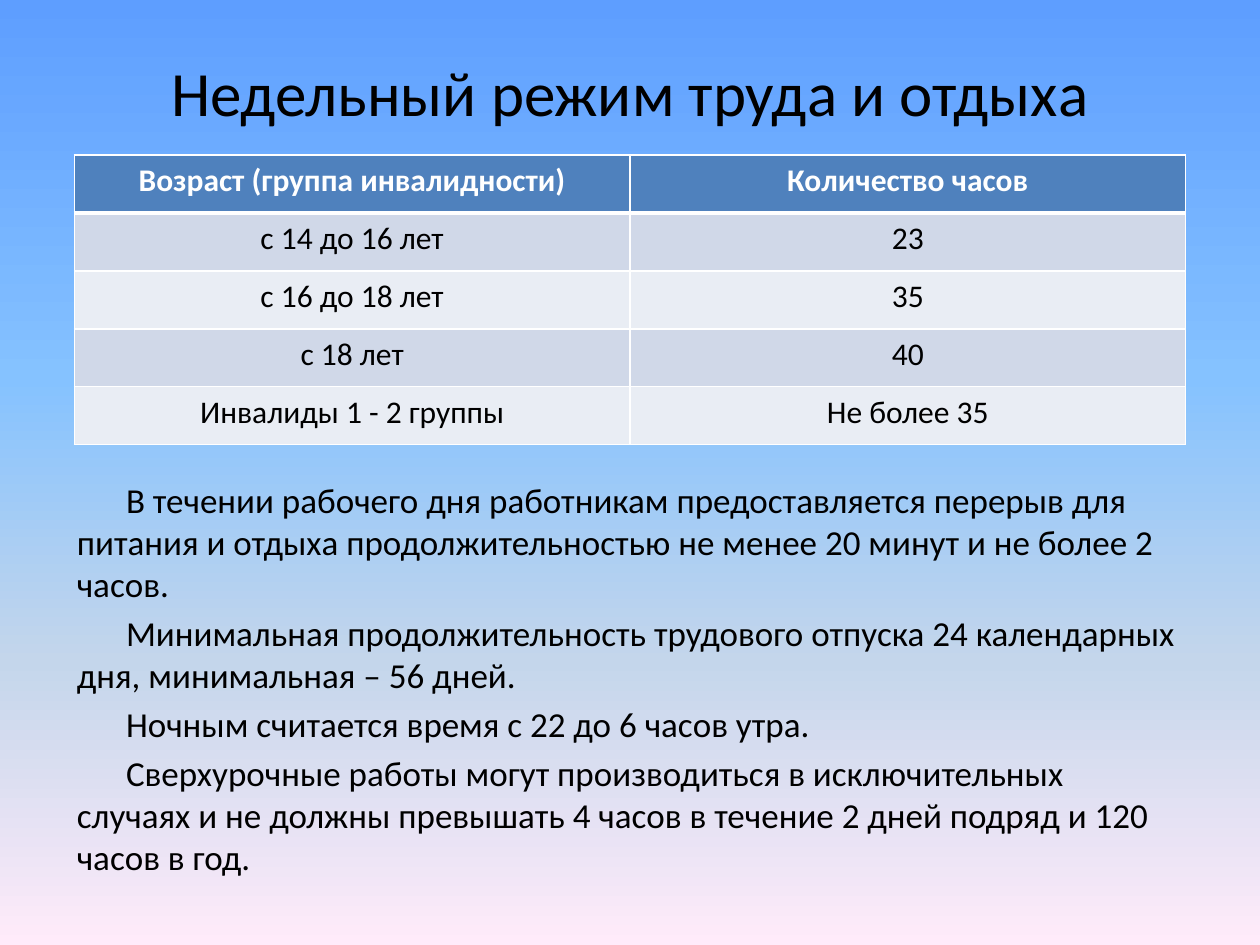
from lxml.etree import SubElement
from pptx import Presentation
from pptx.dml.color import RGBColor
from pptx.enum.text import MSO_ANCHOR, MSO_AUTO_SIZE, PP_ALIGN
from pptx.oxml.ns import qn
from pptx.util import Inches, Pt

WIDE, HIGH = 10, 7.5
ROW = 0.46  # table row height
STOPS = [(0, "5E9EFF"), (40, "85C2FF"), (70, "C4D6EB"), (100, "FFEBFA")]
TITLE = "Недельный режим труда и отдыха"
HOURS = [
    ("Возраст (группа инвалидности)", "Количество часов"),
    ("с 14 до 16 лет", "23"),
    ("с 16 до 18 лет", "35"),
    ("с 18 лет", "40"),
    ("Инвалиды 1 - 2 группы", "Не более 35"),
]
RULES = [
    "В течении рабочего дня работникам предоставляется перерыв для питания "
    "и отдыха продолжительностью не менее 20 минут и не более 2 часов.",
    "Минимальная продолжительность трудового отпуска 24 календарных дня, "
    "минимальная – 56 дней.",
    "Ночным считается время с 22 до 6 часов утра.",
    "Сверхурочные работы могут производиться в исключительных случаях и не "
    "должны превышать 4 часов в течение 2 дней подряд и 120 часов в год.",
]


def color(code):
    return RGBColor.from_string(code)


def apply(item, form):
    for name, value in form.items():
        setattr(item, name, value)


def place(shape, left, top, width, height):
    """Set the box as shares of the slide's size."""
    apply(shape, {
        "left": Inches(left * WIDE), "top": Inches(top * HIGH),
        "width": Inches(width * WIDE), "height": Inches(height * HIGH),
    })


def style(para, size, code="000000", bold=False, **form):
    apply(para.font, {"name": "Calibri", "size": Pt(size), "bold": bold})
    para.font.color.rgb = color(code)
    apply(para, form)


def paint(slide):
    """Fill the background from top to bottom."""
    fill = slide.background.fill
    fill.gradient()
    fill.gradient_angle = 270
    grad = slide.background._cSld.find(".//" + qn("a:gradFill"))
    stops = grad.find(qn("a:gsLst"))
    for stop in list(stops):
        stops.remove(stop)
    for share, code in STOPS:
        stop = SubElement(stops, qn("a:gs"), pos=str(share * 1000))
        SubElement(stop, qn("a:srgbClr"), val=code)


def edge(cell, side, width):
    line = SubElement(cell._tc.get_or_add_tcPr(), qn("a:ln" + side),
                      w=str(Pt(width)))
    fill = SubElement(line, qn("a:solidFill"))
    SubElement(fill, qn("a:srgbClr"), val="FFFFFF")


def write_cell(cell, text, row):
    head = row == 0
    cell.text = text
    apply(cell, {"margin_" + side: Inches(0.05)
                 for side in ("left", "top", "right", "bottom")})
    style(cell.text_frame.paragraphs[0], 18, "FFFFFF" if head else "000000",
          head, alignment=PP_ALIGN.CENTER)
    # The rule under the heading row is thicker
    thick = {(0, "B"), (1, "T")}
    for side in "LRTB":
        edge(cell, side, 3 if (row, side) in thick else 1)
    cell.fill.solid()
    band = "D0D8E8" if row % 2 else "E9EDF4"
    cell.fill.fore_color.rgb = color("4F81BD" if head else band)


def add_hours(slide):
    count = len(HOURS)
    frame = slide.shapes.add_table(count, 2, Inches(0.59), Inches(1.23),
                                   Inches(8.82), Inches(ROW * count))
    for r, texts in enumerate(HOURS):
        frame.table.rows[r].height = Inches(ROW)
        for c, text in enumerate(texts):
            write_cell(frame.table.cell(r, c), text, r)


def set_title(shape):
    place(shape, 0.05, 0.04, 0.9, 0.113)
    shape.text = TITLE
    apply(shape.text_frame, {"vertical_anchor": MSO_ANCHOR.MIDDLE,
                             "auto_size": MSO_AUTO_SIZE.NONE})
    style(shape.text_frame.paragraphs[0], 36, alignment=PP_ALIGN.CENTER)


def set_rules(shape):
    place(shape, 0.051, 0.5, 0.899, 0.463)
    frame = shape.text_frame
    frame.text = "\n".join(RULES)
    frame.auto_size = MSO_AUTO_SIZE.NONE
    for para in frame.paragraphs:
        style(para, 20, space_before=Pt(4))
        # No bullet, first line indented
        props = para._p.get_or_add_pPr()
        props.set("marL", "0")
        props.set("indent", str(Inches(0.39)))
        SubElement(props, qn("a:buNone"))
        props.append(props.find(qn("a:defRPr")))


def main():
    deck = Presentation()
    apply(deck, {"slide_width": Inches(WIDE), "slide_height": Inches(HIGH)})
    slide = deck.slides.add_slide(deck.slide_layouts[1])
    paint(slide)
    set_title(slide.shapes.title)
    add_hours(slide)
    set_rules(slide.placeholders[1])
    deck.save("out.pptx")


if __name__ == "__main__":
    main()
